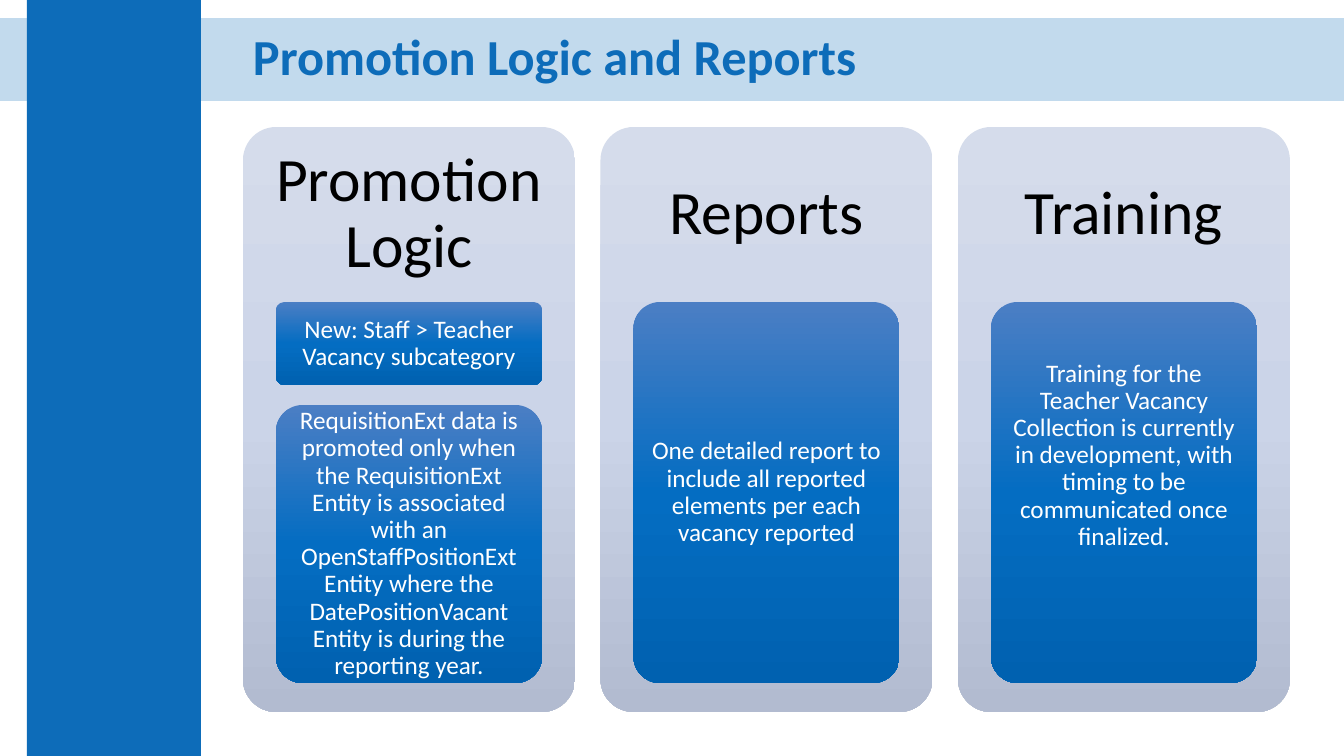
import copy

import pptx
import pptx.dml.color
import pptx.enum.shapes
import pptx.enum.text
import pptx.oxml.ns
import pptx.util
from lxml import etree

RGBColor = pptx.dml.color.RGBColor
MSO_SHAPE = pptx.enum.shapes.MSO_SHAPE
PP_ALIGN = pptx.enum.text.PP_ALIGN
qn = pptx.oxml.ns.qn

SCALE = 914400 / 100.8
WIDTH, HEIGHT = 1344, 756
FONT = "Calibri"
BLUE = RGBColor(0x0D, 0x6C, 0xB9)
BLACK = RGBColor(0, 0, 0)
WHITE = RGBColor(0xFF, 0xFF, 0xFF)
PANEL_STOPS = (RGBColor(0xD5, 0xDC, 0xEB), RGBColor(0xCB, 0xD4, 0xE8), RGBColor(0xB2, 0xBB, 0xD0))
CARD_STOPS = (RGBColor(0x4B, 0x7E, 0xC4), RGBColor(0x04, 0x6D, 0xC2), RGBColor(0x00, 0x61, 0xB0))

COLUMNS = [
    ("Promotion Logic", [
        ("New: Staff > Teacher Vacancy subcategory", 83, 0),
        ("RequisitionExt data is promoted only when the RequisitionExt Entity is associated "
         "with an OpenStaffPositionExt Entity where the DatePositionVacant Entity is during "
         "the reporting year.", 278, 0),
    ]),
    ("Reports", [
        ("One detailed report to include all reported elements per each vacancy reported", 381, 0),
    ]),
    ("Training", [
        ("Training for the Teacher Vacancy Collection is currently in development, with timing "
         "to be communicated once finalized.", 381, 74),
    ]),
]


def px(n):
    """Turn pixels into EMU."""
    return pptx.util.Emu(round(n * SCALE))


def set_text(sp, text, size, color, bold=False, align=PP_ALIGN.CENTER, insets=(10, 5, 10, 5)):
    """Write one vertically centred paragraph into a shape."""
    tf = sp.text_frame
    tf.word_wrap = True
    tf.auto_size = pptx.enum.text.MSO_AUTO_SIZE.NONE
    tf.vertical_anchor = pptx.enum.text.MSO_ANCHOR.MIDDLE
    tf.margin_left, tf.margin_top, tf.margin_right, tf.margin_bottom = map(px, insets)
    p = tf.paragraphs[0]
    p.alignment = align
    p.line_spacing = 0.9
    r = p.add_run()
    r.text = text
    r.font.name = FONT
    r.font.size = pptx.util.Pt(size)
    r.font.bold = bold
    r.font.color.rgb = color


def add_block(slide, box, color, kind=MSO_SHAPE.RECTANGLE):
    """Add a solid shape without line or shadow."""
    sp = slide.shapes.add_shape(kind, *map(px, box))
    sp.shadow.inherit = False
    sp.line.fill.background()
    sp.fill.solid()
    sp.fill.fore_color.rgb = color
    return sp


def add_rounded(slide, box, stops):
    """Add a rounded rectangle with an even top-to-bottom gradient."""
    sp = add_block(slide, box, stops[0], MSO_SHAPE.ROUNDED_RECTANGLE)
    sp.adjustments[0] = 0.1
    sp.fill.gradient()
    sp.fill.gradient_angle = 270
    gs_list = next(sp._element.spPr.iter(qn("a:gsLst")))
    gs_list.insert(1, copy.deepcopy(gs_list[0]))
    for i, (stop, color) in enumerate(zip(sp.fill.gradient_stops, stops)):
        stop.color.rgb = color
        stop.position = i / (len(stops) - 1)
    return sp


def add_header(slide, box, text):
    """Place the pale band, the side bar and the slide title."""
    x, y, w, h = box
    band = add_block(slide, box, BLUE)
    rgb = next(band._element.spPr.iter(qn("a:srgbClr")))
    etree.SubElement(rgb, qn("a:alpha")).set("val", "25000")
    add_block(slide, (x + 27, 0, 174, HEIGHT), BLUE)
    title = slide.shapes.title
    title.left, title.top, title.width, title.height = map(px, (x + 243, y, w - 283, h))
    set_text(title, text, 36, BLUE, bold=True, align=PP_ALIGN.LEFT)
    slide.shapes._spTree.append(title._element)


def add_column(slide, box, heading, cards):
    """Place a panel with its heading and a stack of cards."""
    x, y, w, h = box
    head_h, side, gap = 175, 33, 20
    add_rounded(slide, box, PANEL_STOPS)
    tb = slide.shapes.add_textbox(*map(px, (x, y, w, head_h)))
    set_text(tb, heading, 44, BLACK, insets=(18, 18, 18, 18))
    top = y + head_h
    for text, height, lift in cards:
        card = add_rounded(slide, (x + side, top, w - 2 * side, height), CARD_STOPS)
        set_text(card, text, 18, WHITE, insets=(5, 4, 5, 4 + lift))
        top += height + gap


def add_columns(slide, box, columns, col_w):
    """Spread the columns evenly across the box."""
    x, y, w, h = box
    pitch = (w - col_w) / (len(columns) - 1)
    for i, (heading, cards) in enumerate(columns):
        add_column(slide, (x + i * pitch, y, col_w, h), heading, cards)


def main():
    """Build and save the slide."""
    prs = pptx.Presentation()
    prs.slide_width, prs.slide_height = px(WIDTH), px(HEIGHT)
    slide = prs.slides.add_slide(prs.slide_layouts[5])
    add_header(slide, (0, 18, WIDTH, 83), "Promotion Logic and Reports")
    add_columns(slide, (243, 127, 1047, 585), COLUMNS, 332)
    prs.save("out.pptx")


if __name__ == "__main__":
    main()
